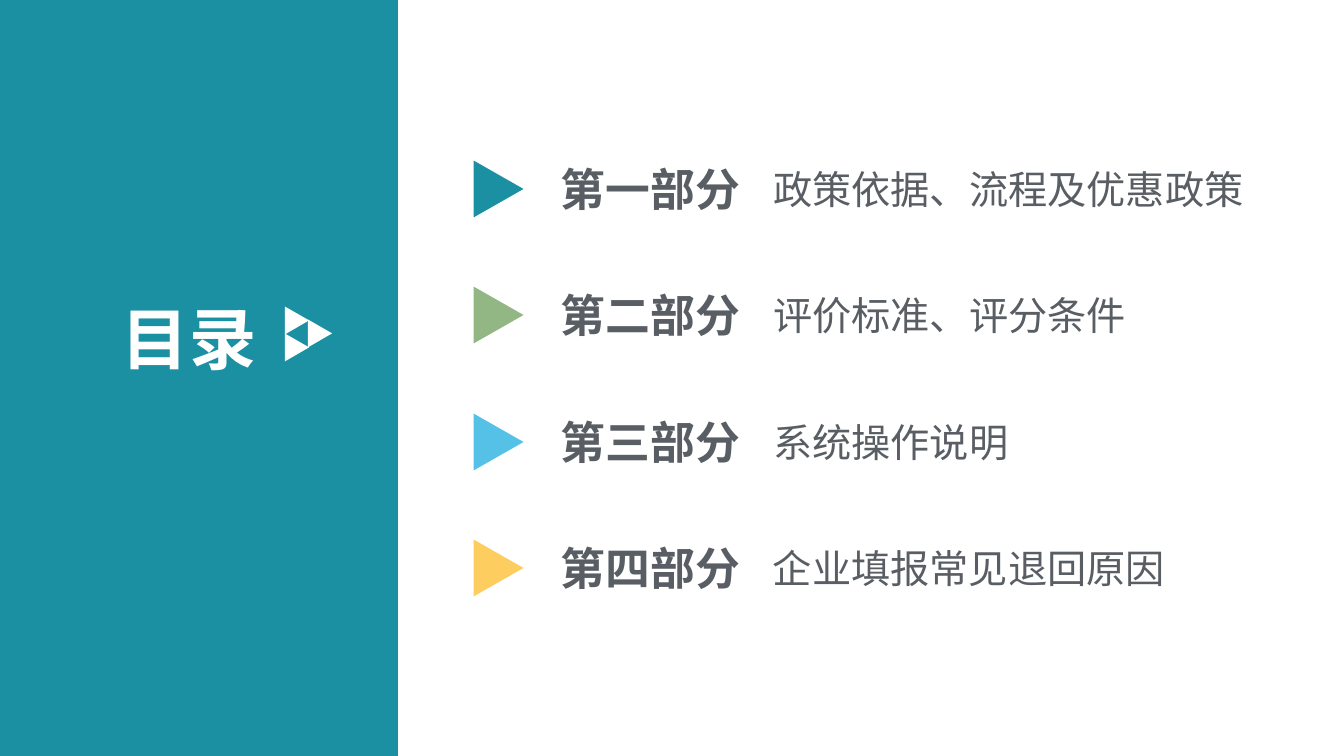
from pptx import Presentation
from pptx.dml.color import RGBColor
from pptx.enum.shapes import MSO_SHAPE
from pptx.enum.text import MSO_ANCHOR, MSO_AUTO_SIZE
from pptx.util import Emu, Pt

SLIDE_WIDTH, SLIDE_HEIGHT = 1344, 756
EMU_PER_PX = 9144000 / SLIDE_WIDTH
FONT = "Noto Sans CJK SC"

WHITE = RGBColor(0xFF, 0xFF, 0xFF)
TEAL = RGBColor(0x1B, 0x90, 0xA2)
GREEN = RGBColor(0x93, 0xB7, 0x84)
BLUE = RGBColor(0x55, 0xC1, 0xE7)
YELLOW = RGBColor(0xFD, 0xCD, 0x5F)
GRAY = RGBColor(0x59, 0x5E, 0x64)

SECTIONS = [
    ("第一部分", "政策依据、流程及优惠政策", 511, TEAL),
    ("第二部分", "评价标准、评分条件", 426, GREEN),
    ("第三部分", "系统操作说明", 310, BLUE),
    ("第四部分", "企业填报常见退回原因", 458, YELLOW),
]
FIRST_ROW_TOP = 156
LAST_ROW_TOP = 535


def px(value):
    return Emu(round(value * EMU_PER_PX))


def add_filled_shape(slide, kind, left, top, width, height, color, rotation=0):
    shape = slide.shapes.add_shape(kind, px(left), px(top), px(width), px(height))
    shape.shadow.inherit = False
    shape.fill.solid()
    shape.fill.fore_color.rgb = color
    shape.line.fill.background()
    shape.rotation = rotation


def add_text(slide, text, left, top, width, height, *, size, color=GRAY, bold=False):
    box = slide.shapes.add_textbox(px(left), px(top), px(width), px(height))
    frame = box.text_frame
    frame.word_wrap = True
    frame.auto_size = MSO_AUTO_SIZE.SHAPE_TO_FIT_TEXT
    frame.vertical_anchor = MSO_ANCHOR.MIDDLE
    frame.margin_left = frame.margin_right = px(10)
    frame.margin_top = frame.margin_bottom = px(5)
    span = frame.paragraphs[0].add_run()
    span.text = text
    span.font.name = FONT
    span.font.size = Pt(size)
    span.font.bold = bold
    span.font.color.rgb = color
    properties = span.font._element
    east_asian = properties.makeelement(
        "{http://schemas.openxmlformats.org/drawingml/2006/main}ea", {"typeface": FONT}
    )
    properties.append(east_asian)


def add_title_panel(slide):
    add_filled_shape(slide, MSO_SHAPE.RECTANGLE, 0, 0, 398, SLIDE_HEIGHT, TEAL)
    add_text(slide, "目录", 112, 292, 176, 91, size=36, color=WHITE, bold=True)
    for left, top in [(277, 305), (277, 332), (300, 318)]:
        add_filled_shape(
            slide, MSO_SHAPE.ISOSCELES_TRIANGLE, left, top, 28, 24, WHITE, rotation=330
        )


def add_section(slide, top, label, topic, topic_width, color):
    add_filled_shape(
        slide, MSO_SHAPE.ISOSCELES_TRIANGLE, 470, top + 8, 57, 50, color, rotation=90
    )
    add_text(slide, label, 551, top, 214, 65, size=24, bold=True)
    add_text(slide, topic, 763, top + 4, topic_width, 58, size=21)


def main():
    deck = Presentation()
    deck.slide_width = px(SLIDE_WIDTH)
    deck.slide_height = px(SLIDE_HEIGHT)
    page = deck.slides.add_slide(deck.slide_layouts[6])
    add_title_panel(page)
    pitch = (LAST_ROW_TOP - FIRST_ROW_TOP) / (len(SECTIONS) - 1)
    for index, section in enumerate(SECTIONS):
        add_section(page, round(FIRST_ROW_TOP + index * pitch), *section)
    deck.save("out.pptx")


if __name__ == "__main__":
    main()
